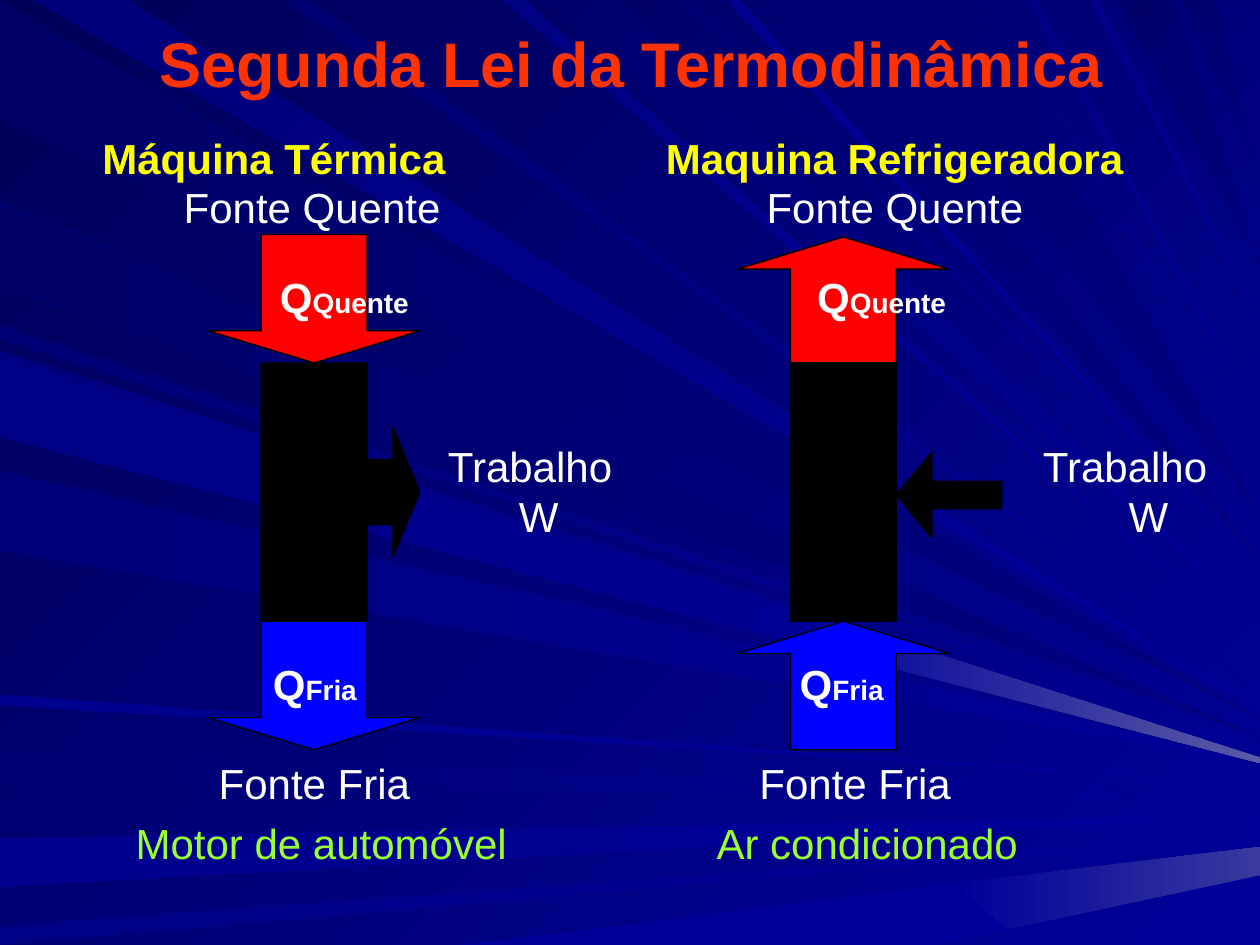
from pptx import Presentation
from pptx.dml.color import RGBColor
from pptx.enum.shapes import MSO_SHAPE
from pptx.enum.text import MSO_ANCHOR, PP_ALIGN
from pptx.util import Pt


def paint(fill, colours, angle=0):
    """Fill with one hex colour, or with a "from-to" gradient at a clockwise angle."""
    stops = [RGBColor.from_string(c) for c in colours.split("-")]
    if len(stops) == 1:
        fill.solid()
        fill.fore_color.rgb = stops[0]
        return
    fill.gradient()
    fill.gradient_angle = 360 - angle
    for stop, colour in zip(fill.gradient_stops, stops):
        stop.color.rgb = colour


def write(p, text, colour, **fmt):
    r = p.add_run()
    r.text = text
    for name, value in {"name": "Arial", **fmt}.items():
        setattr(r.font, name, value)
    paint(r.font.fill, colour)


prs = Presentation()
prs.slide_width, prs.slide_height = Pt(720), Pt(540)
s = prs.slides.add_slide(prs.slide_layouts[6])
paint(s.background.fill, "000058-000099", 45)

# Background rays narrow from the left or top edge to a tip on the right edge:
# start, end, tip, colours
LEFT_RAYS = [
    (1, 67, 410, "000069-000080"), (429, 449, 455, "000071-000099"),
    (479, 507, 466, "00008C-000099"), (529, 540, 477, "000085-000099"),
    (186, 194, 424, "000076-000099"), (114, 164, 421, "00006B-000080"),
    (200, 246, 433, "00007E-000099"), (269, 315, 436, "00007B-000099"),
    (397, 403, 448, "00008E-000099"), (204, 250, 436, "000085-000099"),
]
TOP_RAYS = [
    (19, 73, 405, "00007B-000099"), (287, 300, 373, "000083-000099"),
    (307, 354, 355, "00006D-000099"), (389, 397, 333, "000073-000099"),
    (436, 476, 321, "000073-000080"), (639, 670, 151, "00006B-000080"),
    (676, 694, 101, "00006D-000080"), (162, 178, 396, "000070-000099"),
    (415, 423, 327, "00008E-000099"), (494, 554, 295, "000073-000080"),
    (565, 570, 257, "000078-000099"), (587, 593, 242, "000085-000099"),
    (623, 628, 183, "00008A-000099"),
]
rays = [(c, 0, [(0, a), (720, tip), (0, b)]) for a, b, tip, c in LEFT_RAYS]
rays += [(c, 45, [(a, 0), (720, tip), (b, 0)]) for a, b, tip, c in TOP_RAYS]
# Lighter ends of the lower rays
rays += [
    ("000099", 0, [(262, 540), (544, 505), (577, 531), (534, 540)]),
    ("000099-39399E", 0, [(544, 505), (720, 484), (720, 500), (576, 531)]),
    ("000099-5A5AA6", 0, [(456, 368), (459, 349), (720, 433), (720, 436)]),
]
for colours, angle, corners in rays:
    fb = s.shapes.build_freeform(*corners[0], scale=Pt(1))
    fb.add_line_segments(corners[1:], close=True)
    sp = fb.convert_to_shape()
    sp.shadow.inherit = False
    sp.line.fill.background()
    paint(sp.fill, colours, angle)

# Title
sp = s.shapes.add_textbox(Pt(36.7), Pt(0), Pt(648), Pt(70.6))
tf = sp.text_frame
tf.word_wrap = True
tf.vertical_anchor = MSO_ANCHOR.MIDDLE
p = tf.paragraphs[0]
p.alignment = PP_ALIGN.CENTER
write(p, "Segunda Lei da Termodinâmica", "FF3300", size=Pt(36), bold=True)

# Heat arrows (down in the engine, up in the refrigerator), bodies and work arrow
parts = [
    (MSO_SHAPE.DOWN_ARROW, (left, top, 121, 73.4), rotation, colour, (0.5, 0.25))
    for left, hot_top, rotation in [(119, 134, 0), (421.4, 135.4, 180)]
    for top, colour in [(hot_top, "FF0000"), (355, "0000FF")]
]
parts += [
    (MSO_SHAPE.RIGHT_ARROW_CALLOUT, (149.2, 207.4, 90.8, 147.6), 0, "000000",
     (0.41, 0.41, 0.17, 0.67)),
    (MSO_SHAPE.RECTANGLE, (451.6, 207.4, 60.5, 147.6), 0, "000000", ()),
    (MSO_SHAPE.LEFT_ARROW, (512, 258.4, 60.5, 49), 0, "000000", (0.32, 0.42)),
]
for preset, box, rotation, colour, adjustments in parts:
    sp = s.shapes.add_shape(preset, *map(Pt, box))
    sp.shadow.inherit = False
    sp.rotation = rotation
    for i, value in enumerate(adjustments):
        sp.adjustments[i] = value
    paint(sp.fill, colour)
    paint(sp.line.fill, "000000")
    sp.line.width = Pt(0.75)

# Labels: top, bold, colour, left edges, texts for both machines, subscript
LABELS = [
    (76, True, "FFFF00", (58.5, 380.5), ("Máquina Térmica", "Maquina Refrigeradora"), ""),
    (104, False, "FFFFFF", (105, 438), ("Fonte Quente",) * 2, ""),
    (432.6, False, "FFFFFF", (125, 434), ("Fonte Fria",) * 2, ""),
    (251.8, False, "FFFFFF", (256, 596), ("Trabalho",) * 2, ""),
    (280.4, False, "FFFFFF", (296.5, 645), ("W",) * 2, ""),
    (155.4, True, "FFFFFF", (160, 467), ("Q",) * 2, "Quente"),
    (376.4, True, "FFFFFF", (156, 457), ("Q",) * 2, "Fria"),
    (467, False, "99FF33", (77.5, 409.5), ("Motor de automóvel", "Ar condicionado"), ""),
]
for top, bold, colour, lefts, texts, subscript in LABELS:
    for left, text in zip(lefts, texts):
        width = min(14 * len(text + subscript) + 10, 720 - left)
        sp = s.shapes.add_textbox(Pt(left), Pt(top), Pt(width), Pt(28))
        tf = sp.text_frame
        tf.word_wrap = False
        for side in ("left", "top", "right", "bottom"):
            setattr(tf, f"margin_{side}", Pt(0))
        p = tf.paragraphs[0]
        p.alignment = PP_ALIGN.LEFT
        write(p, text, colour, size=Pt(24), bold=bold)
        if subscript:
            write(p, subscript, colour, size=Pt(16), bold=bold)

prs.save("out.pptx")
